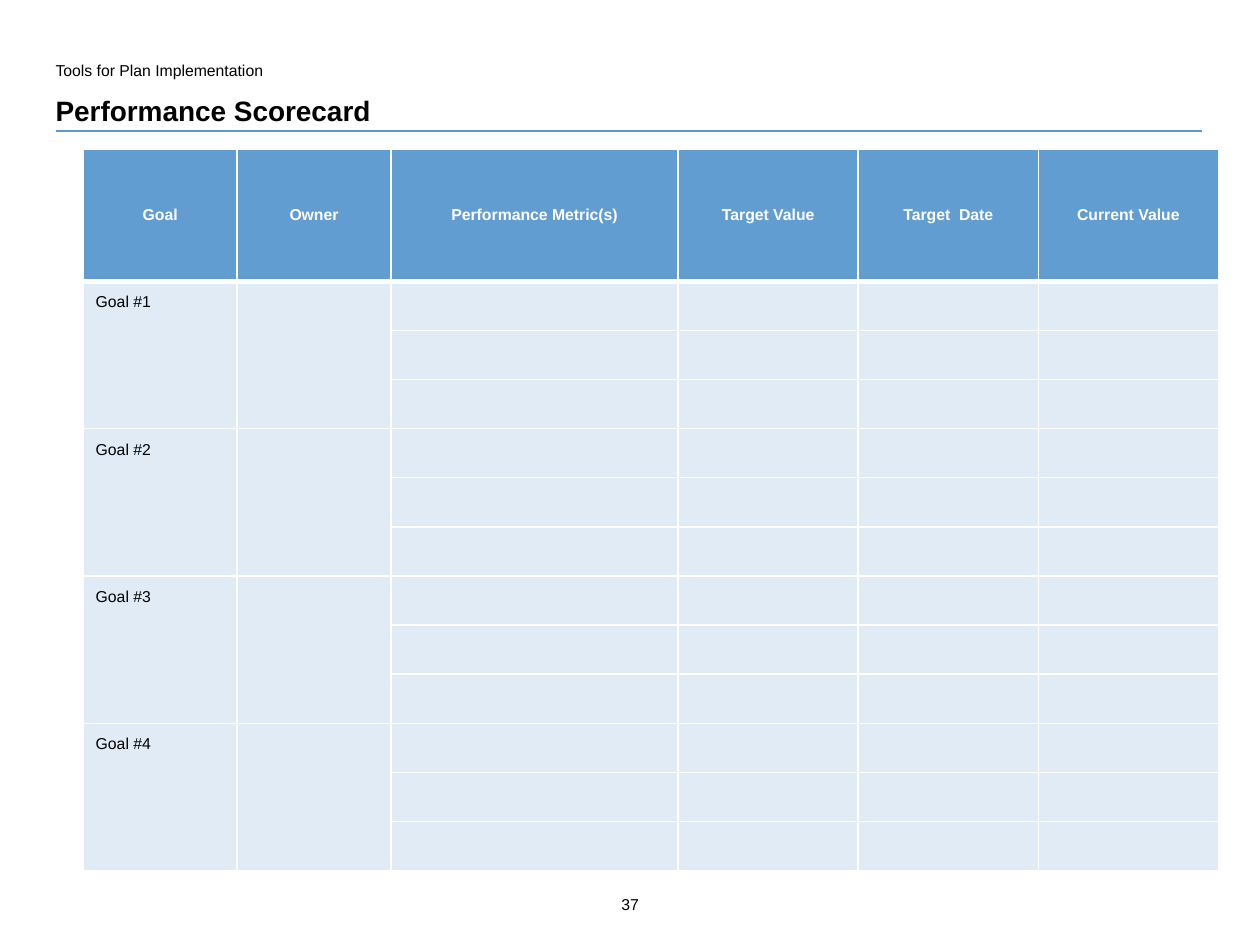
from dataclasses import dataclass

from lxml import etree
from pptx import Presentation
from pptx import util as u
from pptx.dml.color import RGBColor
from pptx.enum import shapes, text
from pptx.oxml.ns import qn


@dataclass(frozen=True)
class Theme:
    """Colours, font and type sizes of the scorecard."""

    font: str = "Arial"
    ink: str = "000000"
    white: str = "FFFFFF"
    rule: str = "5D9ACF"
    header: str = "629DD1"
    body: str = "E0EBF6"
    title_size: float = 16
    text_size: float = 9
    grid_width: float = 1
    header_rule_width: float = 3


class PageBuilder:
    """Places styled elements on the current slide."""

    def __init__(self, deck, theme):
        self.theme = theme
        self.page = deck.slides.add_slide(deck.slide_layouts[1])

    def set_text(self, frame, wording, size, color, bold=False,
                 align=text.PP_ALIGN.LEFT, margins=(0, 0)):
        """Fill a text frame or cell with one styled paragraph."""
        frame.margin_left = frame.margin_right = u.Cm(margins[0])
        frame.margin_top = frame.margin_bottom = u.Cm(margins[1])
        content = getattr(frame, "text_frame", frame)
        content.text = wording
        para = content.paragraphs[0]
        para.alignment = align
        para.space_before = u.Pt(0)
        for span in para.runs:
            span.font.name = self.theme.font
            span.font.size = u.Pt(size)
            span.font.bold = bold
            span.font.color.rgb = RGBColor.from_string(color)
        if not para.runs:
            etree.SubElement(para._p, qn("a:endParaRPr"), sz=str(int(size * 100)))
        return para

    def placeholder(self, box, area, wording, size, anchor, bold=False, margin=0):
        """Move a placeholder and set unbulleted text in it."""
        box.left, box.top, box.width, box.height = map(u.Cm, area)
        frame = box.text_frame
        frame.auto_size = text.MSO_AUTO_SIZE.NONE
        frame.vertical_anchor = anchor
        para = self.set_text(frame, wording, size, self.theme.ink, bold,
                             margins=(0, margin))
        properties = para._p.get_or_add_pPr()
        properties.set("marL", "0")
        properties.set("indent", "0")
        etree.SubElement(properties, qn("a:buNone"))

    def title(self, area, wording):
        """Set the slide title."""
        self.placeholder(self.page.shapes.title, area, wording,
                         self.theme.title_size, text.MSO_ANCHOR.BOTTOM, bold=True)

    def section(self, area, wording):
        """Set the section name above the title."""
        self.placeholder(self.page.placeholders[1], area, wording,
                         self.theme.text_size, text.MSO_ANCHOR.TOP, margin=0.1)

    def rule(self, left, right, top):
        """Draw a thin horizontal rule."""
        line = self.page.shapes.add_connector(
            shapes.MSO_CONNECTOR.STRAIGHT, *map(u.Cm, (left, top, right, top)))
        line.line.color.rgb = RGBColor.from_string(self.theme.rule)
        line.line.width = u.Pt(0.75)
        etree.SubElement(line._element.spPr, qn("a:effectLst"))

    def page_number(self, area, number):
        """Add the centred page number."""
        box = self.page.shapes.add_textbox(*map(u.Cm, area))
        box.text_frame.word_wrap = True
        self.set_text(box.text_frame, number, self.theme.text_size, self.theme.ink,
                      align=text.PP_ALIGN.CENTER, margins=(0.1, 0.1))

    def borders(self, cell, widths):
        """Draw the white borders of a cell, given widths by side."""
        properties = cell._tc.get_or_add_tcPr()
        for side, width in widths.items():
            line = etree.SubElement(properties, qn(f"a:ln{side}"),
                                    w=str(int(u.Pt(width))))
            fill = etree.SubElement(line, qn("a:solidFill"))
            etree.SubElement(fill, qn("a:srgbClr"), val=self.theme.white)

    def scorecard(self, corner, widths, header_height, row_height,
                  headings, goals, metrics_per_goal):
        """Build the table with a group of metric rows for each goal."""
        theme = self.theme
        heights = [header_height] + [row_height] * (len(goals) * metrics_per_goal)
        size = (sum(widths), sum(heights))
        table = self.page.shapes.add_table(
            len(heights), len(widths), *map(u.Cm, (*corner, *size))).table
        for column, width in zip(table.columns, widths):
            column.width = u.Cm(width)
        for row, height in zip(table.rows, heights):
            row.height = u.Cm(height)

        labels = {(0, column): heading for column, heading in enumerate(headings)}
        for index, goal in enumerate(goals):
            labels[1 + index * metrics_per_goal, 0] = goal
        for row_index, row in enumerate(table.rows):
            is_header = row_index == 0
            edges = dict.fromkeys("LRTB", theme.grid_width)
            if row_index < 2:
                edges["B" if is_header else "T"] = theme.header_rule_width
            for column, cell in enumerate(row.cells):
                self.set_text(
                    cell, labels.get((row_index, column), ""), theme.text_size,
                    theme.white if is_header else theme.ink, is_header,
                    text.PP_ALIGN.CENTER if is_header else text.PP_ALIGN.LEFT,
                    (0.25, 0.25))
                cell.vertical_anchor = (text.MSO_ANCHOR.MIDDLE if is_header
                                        else text.MSO_ANCHOR.TOP)
                self.borders(cell, edges)
                cell.fill.solid()
                cell.fill.fore_color.rgb = RGBColor.from_string(
                    theme.header if is_header else theme.body)

        for first in range(1, len(heights), metrics_per_goal):
            for column in range(2):
                last = table.cell(first + metrics_per_goal - 1, column)
                table.cell(first, column).merge(last)


def main():
    """Build and save the performance scorecard."""
    deck = Presentation()
    deck.slide_width, deck.slide_height = u.Cm(25.4), u.Cm(19.05)
    builder = PageBuilder(deck, Theme())
    builder.rule(1.12, 24.23, 2.64)
    builder.page_number((11.84, 17.93, 1.73, 0.66), "37")
    builder.section((1.12, 1.12, 7.34, 0.51), "Tools for Plan Implementation")
    builder.title((1.12, 1.88, 23.09, 0.69), "Performance Scorecard")
    builder.scorecard(
        corner=(1.68, 3), widths=[3.1, 3.1, 5.79, 3.63, 3.63, 3.63],
        header_height=2.67, row_height=0.99,
        headings=["Goal", "Owner", "Performance Metric(s)", "Target Value",
                  "Target  Date", "Current Value"],
        goals=[f"Goal #{number}" for number in range(1, 5)],
        metrics_per_goal=3)
    deck.save("out.pptx")


if __name__ == "__main__":
    main()
